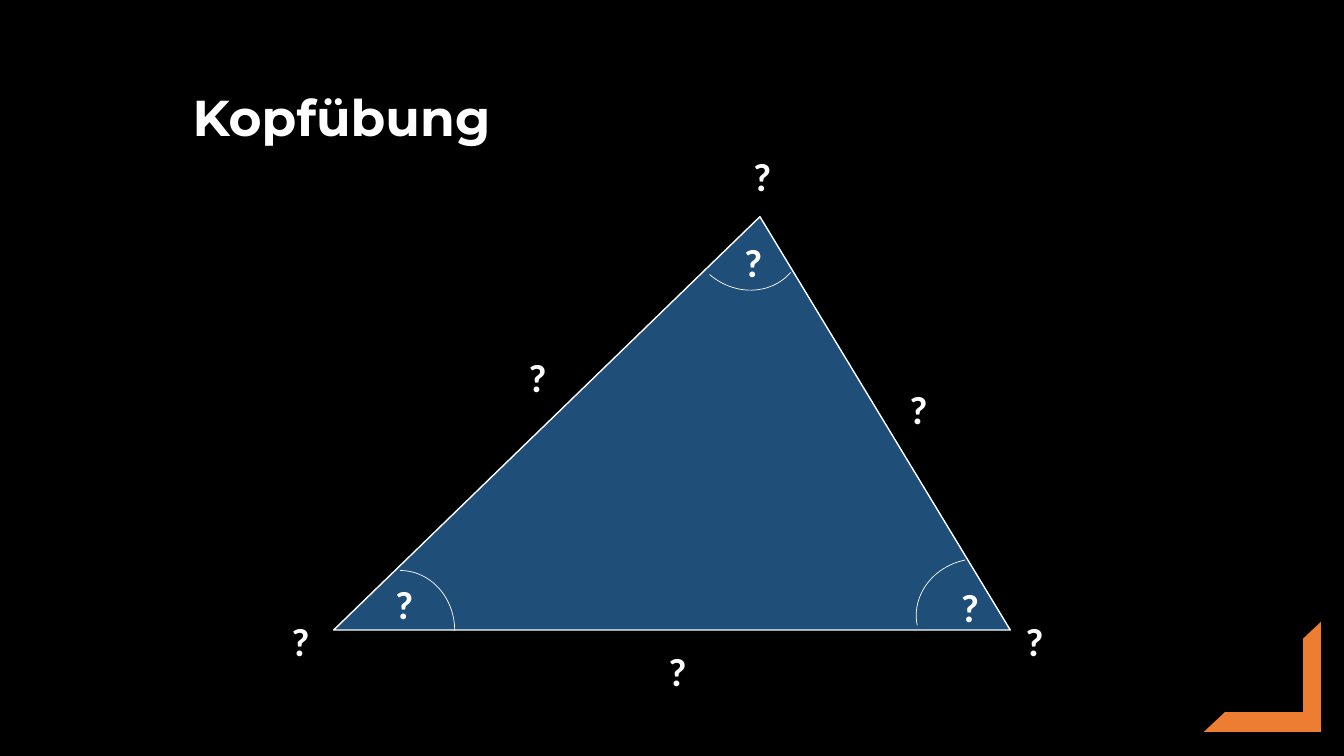
from dataclasses import dataclass

import pptx
import pptx.dml.color
import pptx.enum.shapes
import pptx.enum.text
import pptx.util
from pptx.util import Inches


@dataclass(frozen=True)
class Theme:
    background: str = "000000"
    foreground: str = "FFFFFF"
    triangle: str = "1F4E79"
    accent: str = "ED7D31"
    title_font: str = "Montserrat"
    label_font: str = "Calibri"
    title_size: int = 36
    label_size: int = 28
    side_width: float = 1
    arc_width: float = 0.5


THEME = Theme()
SHAPES = pptx.enum.shapes.MSO_SHAPE
ALIGN = pptx.enum.text.PP_ALIGN

CORNER_LABELS = [(2.56, 6.08), (7.14, 1.46), (9.84, 6.08)]
SIDE_LABELS = [(8.69, 3.77), (4.91, 3.46), (6.3, 6.37)]
ANGLE_LABELS = [(9.2, 5.74), (3.59, 5.71), (7.05, 2.32)]
ANGLE_ARCS = [(3.43, 5.66, 0), (9.14, 5.49, 258.4), (6.85, 1.72, 130.8)]


def rgb(color):
    return pptx.dml.color.RGBColor.from_string(color)


def write(frame, text, font_name, size, alignment):
    frame.word_wrap = True
    frame.auto_size = pptx.enum.text.MSO_AUTO_SIZE.SHAPE_TO_FIT_TEXT
    paragraph = frame.paragraphs[0]
    paragraph.text = text
    paragraph.alignment = alignment
    paragraph.font.name = font_name
    paragraph.font.size = pptx.util.Pt(size)
    paragraph.font.bold = True
    paragraph.font.color.rgb = rgb(THEME.foreground)


def add_title(slide, text):
    title = slide.shapes.title
    title.left, title.top = Inches(1.81), Inches(0.8)
    title.width, title.height = Inches(7.78), Inches(0.71)
    title.text_frame.vertical_anchor = pptx.enum.text.MSO_ANCHOR.MIDDLE
    write(title.text_frame, text, THEME.title_font, THEME.title_size, ALIGN.LEFT)


def add_figure(slide, kind, box, fill=None, line_width=None, rotation=0, adjustments=()):
    figure = slide.shapes.add_shape(kind, *map(Inches, box))
    figure.shadow.inherit = False
    figure.rotation = rotation
    for index, value in enumerate(adjustments):
        figure.adjustments[index] = value
    if fill:
        figure.fill.solid()
        figure.fill.fore_color.rgb = rgb(fill)
    else:
        figure.fill.background()
    if line_width:
        figure.line.color.rgb = rgb(THEME.foreground)
        figure.line.width = pptx.util.Pt(line_width)
    else:
        figure.line.fill.background()


def add_question_mark(slide, left, top):
    label = slide.shapes.add_textbox(Inches(left), Inches(top), Inches(0.84), Inches(0.57))
    write(label.text_frame, "?", THEME.label_font, THEME.label_size, ALIGN.CENTER)


def main():
    presentation = pptx.Presentation()
    presentation.slide_width = Inches(13.33)
    presentation.slide_height = Inches(7.5)
    slide = presentation.slides.add_slide(presentation.slide_layouts.get_by_name("Title Only"))
    slide.background.fill.solid()
    slide.background.fill.fore_color.rgb = rgb(THEME.background)

    add_title(slide, "Kopfübung")
    add_figure(slide, SHAPES.HALF_FRAME, (11.94, 6.17, 1.16, 1.09), fill=THEME.accent,
               rotation=180, adjustments=(0.18, 0.16))
    add_figure(slide, SHAPES.ISOSCELES_TRIANGLE, (3.31, 2.15, 6.71, 4.1), fill=THEME.triangle,
               line_width=THEME.side_width, adjustments=(0.63,))
    for left, top in CORNER_LABELS + SIDE_LABELS + ANGLE_LABELS:
        add_question_mark(slide, left, top)
    for left, top, rotation in ANGLE_ARCS:
        add_figure(slide, SHAPES.ARC, (left, top, 1.08, 1.19),
                   line_width=THEME.arc_width, rotation=rotation)

    presentation.save("out.pptx")


if __name__ == "__main__":
    main()
